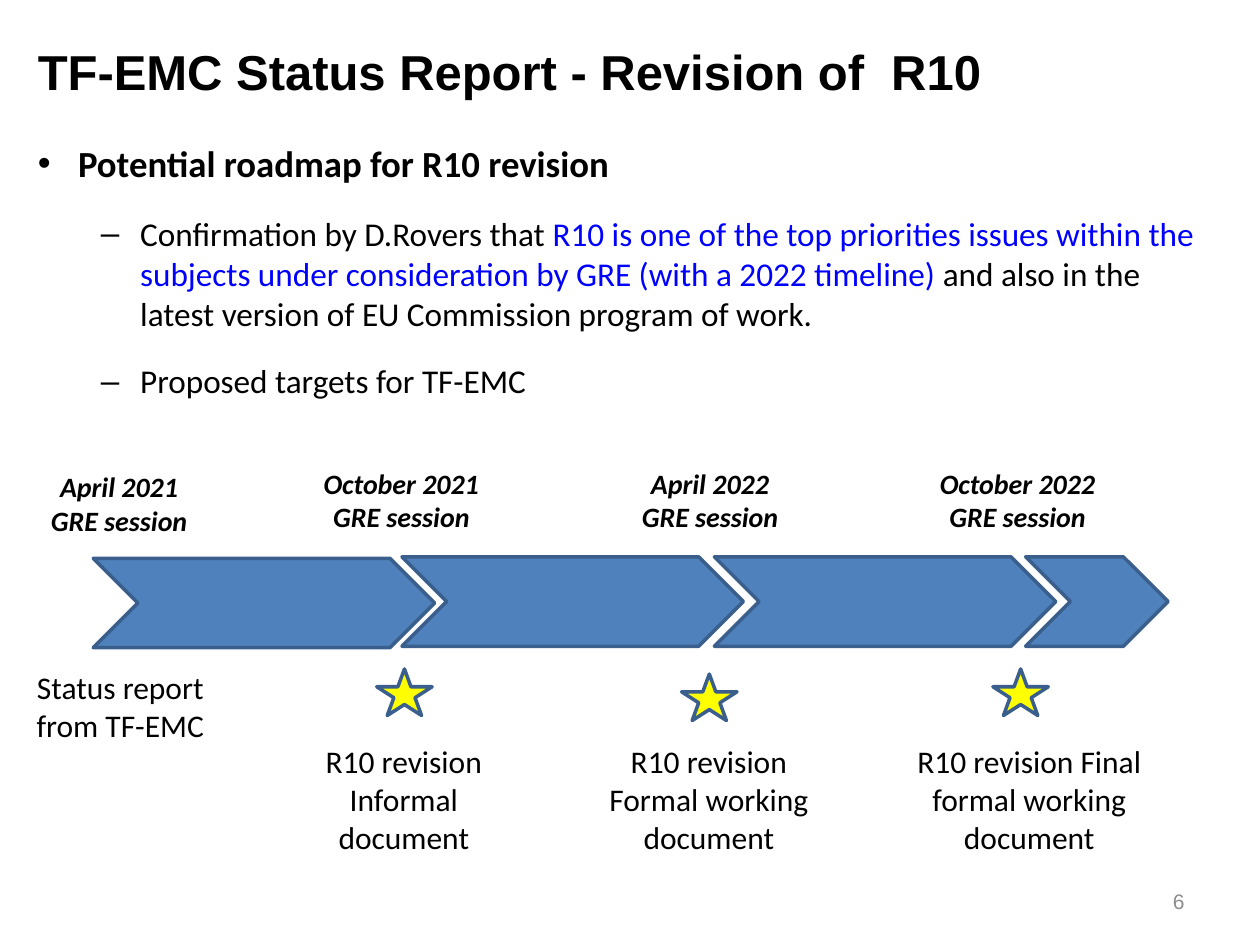
from dataclasses import dataclass

from pptx import Presentation
from pptx.dml.color import RGBColor
from pptx.enum.shapes import MSO_SHAPE as Preset
from pptx.enum.text import MSO_ANCHOR as Anchor, MSO_AUTO_SIZE as AutoSize, PP_ALIGN as Align
from pptx.util import Pt


@dataclass(frozen=True)
class Theme:
    heading_font: str = "Arial"
    text_font: str = "Calibri"
    black: str = "000000"
    grey: str = "8C8C8C"
    highlight: str = "0000FF"
    arrow: str = "4F81BD"
    outline: str = "3A5F8C"
    star: str = "FFFF00"
    title_size: float = 28
    topic_size: float = 21
    detail_size: float = 19
    label_size: float = 18
    session_size: float = 16
    number_size: float = 12


class SlideBuilder:
    def __init__(self, slide, theme):
        self.slide = slide
        self.theme = theme

    def place(self, shape, box):
        for name, value in zip(("left", "top", "width", "height"), box):
            setattr(shape, name, Pt(value))

    def add_run(self, paragraph, text, size, color=None, font=None, **extra):
        run = paragraph.add_run()
        run.text = text
        values = {"name": font or self.theme.text_font, "size": Pt(size), "bold": False, **extra}
        for name, value in values.items():
            setattr(run.font, name, value)
        run.font.color.rgb = RGBColor.from_string(color or self.theme.black)

    def format_frame(self, frame, anchor):
        values = {"word_wrap": True, "auto_size": AutoSize.NONE, "vertical_anchor": anchor}
        for name, value in values.items():
            setattr(frame, name, value)

    def title(self, text, box):
        shape = self.slide.shapes.title
        self.place(shape, box)
        self.format_frame(shape.text_frame, Anchor.MIDDLE)
        paragraph = shape.text_frame.paragraphs[0]
        paragraph.alignment = Align.LEFT
        self.add_run(paragraph, text, self.theme.title_size, font=self.theme.heading_font, bold=True)

    def bullets(self, items, box):
        shape = self.slide.placeholders[1]
        self.place(shape, box)
        frame = shape.text_frame
        self.format_frame(frame, Anchor.TOP)
        for index, (level, runs) in enumerate(items):
            paragraph = frame.add_paragraph() if index else frame.paragraphs[0]
            values = {"level": level, "space_before": Pt(4 if index else 0), "space_after": Pt(12)}
            for name, value in values.items():
                setattr(paragraph, name, value)
            margin, indent = ((23, -23), (58.5, -22.5))[level]
            properties = paragraph._p.get_or_add_pPr()
            properties.set("marL", str(Pt(margin)))
            properties.set("indent", str(Pt(indent)))
            size = (self.theme.topic_size, self.theme.detail_size)[level]
            for text, color in runs:
                self.add_run(paragraph, text, size, color, bold=level == 0)

    def text(self, lines, box, size, align=Align.CENTER, anchor=Anchor.TOP, **style):
        shape = self.slide.shapes.add_textbox(*map(Pt, box))
        frame = shape.text_frame
        self.format_frame(frame, anchor)
        for index, line in enumerate(lines):
            paragraph = frame.add_paragraph() if index else frame.paragraphs[0]
            paragraph.alignment = align
            self.add_run(paragraph, line, size, **style)

    def preset(self, kind, box, fill):
        shape = self.slide.shapes.add_shape(kind, *map(Pt, box))
        shape.shadow.inherit = False
        shape.fill.solid()
        shape.fill.fore_color.rgb = RGBColor.from_string(fill)
        shape.line.color.rgb = RGBColor.from_string(self.theme.outline)
        shape.line.width = Pt(2)


def main():
    theme = Theme()
    presentation = Presentation()
    presentation.slide_width = Pt(720)
    presentation.slide_height = Pt(540)
    slide = presentation.slides.add_slide(presentation.slide_layouts[1])
    builder = SlideBuilder(slide, theme)

    builder.title("TF-EMC Status Report - Revision of  R10", (14.4, 15.1, 680.4, 51.1))
    builder.bullets([
        (0, [("Potential roadmap for R10 revision", theme.black)]),
        (1, [
            ("Confirmation by D.Rovers that ", theme.black),
            ("R10 is one of the top priorities issues within the subjects under "
             "consideration by GRE (with a 2022 timeline) ", theme.highlight),
            ("and also in the latest version of EU Commission program of work.", theme.black),
        ]),
        (1, [("Proposed targets for TF-EMC", theme.black)]),
    ], (14.4, 77, 682.6, 164.2))

    for left, top, width in (
        (53.3, 319, 195.1), (229.7, 318.2, 195.1), (408.2, 318.2, 195.1), (586.1, 318.2, 81.4),
    ):
        builder.preset(Preset.CHEVRON, (left, top, width, 51.1), theme.arrow)

    for month, left, top in (
        ("April 2021", 0, 265), ("October 2021", 161.3, 262.8),
        ("April 2022", 337.7, 262.8), ("October 2022", 513.4, 262.8),
    ):
        builder.text((month, "GRE session"), (left, top, 136.1, 46.1),
                     theme.session_size, bold=True, italic=True)

    for left, top in ((215.3, 382.3), (389.5, 385.2), (567.4, 382.3)):
        builder.preset(Preset.STAR_5_POINT, (left, top, 31.7, 26.6), theme.star)

    for text, box in (
        ("Status report from TF-EMC", (0.7, 378, 136.1, 51.1)),
        ("R10 revision Informal document", (162.7, 420.5, 136.1, 72.7)),
        ("R10 revision Formal working document", (337, 420.5, 136.1, 72.7)),
        ("R10 revision Final formal working document", (505.4, 420.5, 165.6, 72.7)),
    ):
        builder.text((text,), box, theme.label_size)

    builder.text(("6",), (516.2, 500.4, 167.8, 28.8), theme.number_size, Align.RIGHT,
                 Anchor.MIDDLE, color=theme.grey, font=theme.heading_font)

    presentation.save("out.pptx")


if __name__ == "__main__":
    main()
